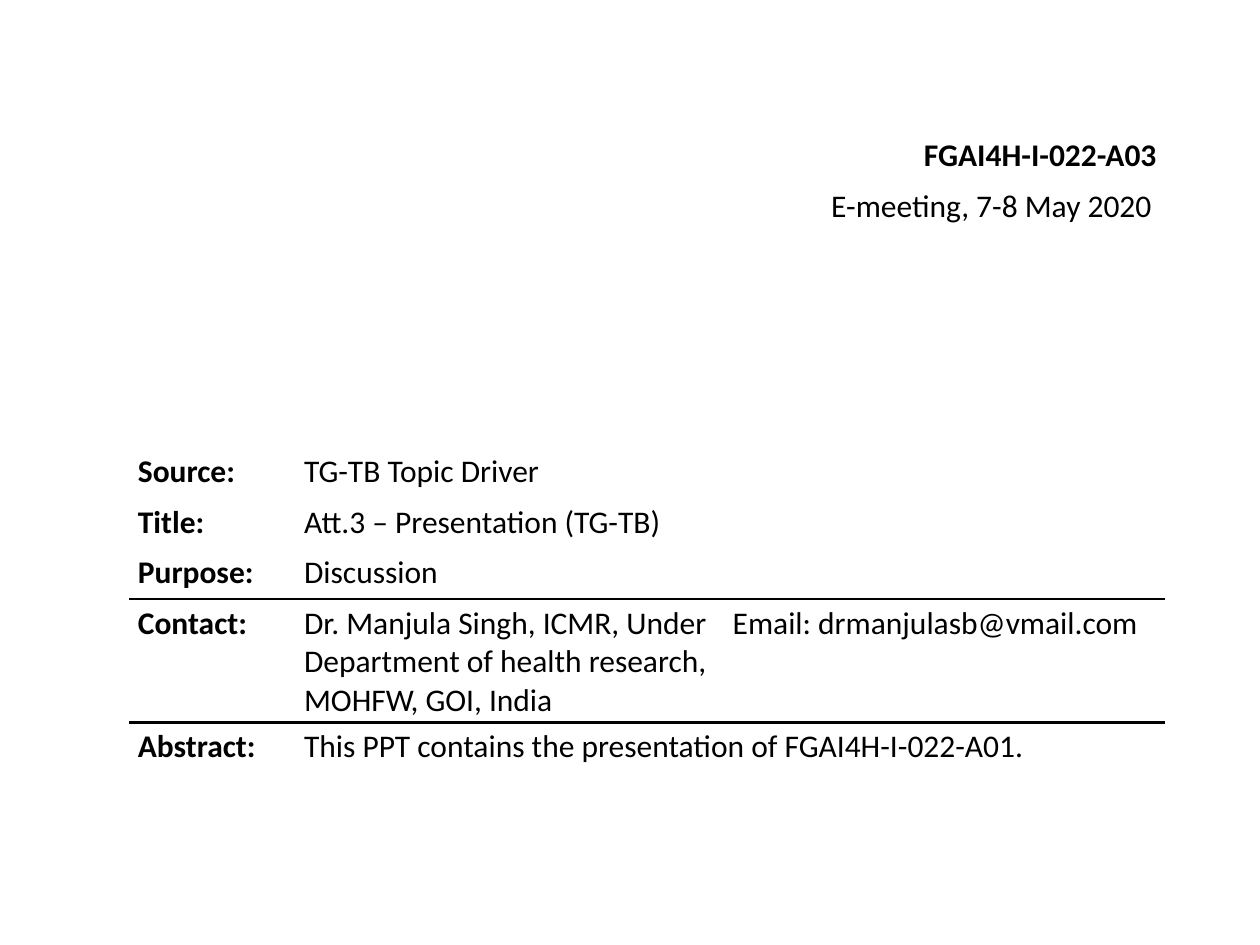
from dataclasses import dataclass

from lxml.etree import SubElement
from pptx import Presentation
from pptx.dml.color import RGBColor
from pptx.enum.text import MSO_AUTO_SIZE, PP_ALIGN
from pptx.oxml.ns import qn
from pptx.util import Cm, Pt


@dataclass(frozen=True)
class Theme:
    """Hold the colours, font and sizes of the cover sheet."""

    ink: str = "000000"
    font: str = "Calibri"
    text_size: int = 18
    rule_width: float = 1.5
    plain_table_style: str = "{2D5ABB26-0587-4C30-8999-92F81FD0307C}"


THEME = Theme()

COLUMN_WIDTHS = (3.35, 8.64, 8.89)
ROW_HEIGHTS = (1.02, 1.02, 1.02, 2.47, 1.02)
RULES_BELOW = (2, 3)
DETAILS = (
    ("Source:", "TG-TB Topic Driver"),
    ("Title:", "Att.3 – Presentation (TG-TB)"),
    ("Purpose:", "Discussion"),
    (
        "Contact:",
        "Dr. Manjula Singh, ICMR, Under Department of health research, MOHFW, GOI, India",
        "Email: drmanjulasb@vmail.com",
    ),
    ("Abstract:", "This PPT contains the presentation of FGAI4H-I-022-A01.\u00a0"),
)


def write_text(text_frame, text, bold=False, alignment=PP_ALIGN.LEFT):
    """Put one styled paragraph into a text frame."""
    text_frame.text = text
    paragraph = text_frame.paragraphs[0]
    paragraph.alignment = alignment
    for run in paragraph.runs:
        run.font.name = THEME.font
        run.font.size = Pt(THEME.text_size)
        run.font.bold = bold
        run.font.color.rgb = RGBColor.from_string(THEME.ink)


def add_heading(slide, text, left, top, width, bold=False):
    """Add a right-aligned line of the document heading."""
    shape = slide.shapes.add_textbox(Cm(left), Cm(top), Cm(width), Cm(1.02))
    text_frame = shape.text_frame
    text_frame.word_wrap = False
    text_frame.auto_size = MSO_AUTO_SIZE.SHAPE_TO_FIT_TEXT
    write_text(text_frame, text, bold, PP_ALIGN.RIGHT)


def add_rule(cell, side):
    """Draw a solid border on one side of a table cell."""
    properties = cell._tc.get_or_add_tcPr()
    line = SubElement(properties, qn(f"a:ln{side}"), w=str(Pt(THEME.rule_width)))
    fill = SubElement(line, qn("a:solidFill"))
    SubElement(fill, qn("a:srgbClr"), val=THEME.ink)


def format_cell(cell, row_index):
    """Set the margins, rules and empty fill of a table cell."""
    cell.margin_left = cell.margin_right = Cm(0.18)
    cell.margin_top = cell.margin_bottom = Cm(0.1)
    if row_index - 1 in RULES_BELOW:
        add_rule(cell, "T")
    if row_index in RULES_BELOW:
        add_rule(cell, "B")
    cell.fill.background()


def add_details_table(slide, left, top):
    """Add the table of document details with labels in the first column."""
    table = slide.shapes.add_table(
        len(ROW_HEIGHTS), len(COLUMN_WIDTHS), Cm(left), Cm(top),
        Cm(sum(COLUMN_WIDTHS)), Cm(sum(ROW_HEIGHTS)),
    ).table
    table.first_row = table.horz_banding = False
    table._tbl.tblPr.find(qn("a:tableStyleId")).text = THEME.plain_table_style
    for column, width in zip(table.columns, COLUMN_WIDTHS):
        column.width = Cm(width)
    for row_index, texts in enumerate(DETAILS):
        row = table.rows[row_index]
        row.height = Cm(ROW_HEIGHTS[row_index])
        for cell in row.cells:
            format_cell(cell, row_index)
        if len(texts) < len(COLUMN_WIDTHS):
            table.cell(row_index, 1).merge(table.cell(row_index, 2))
        for column_index, text in enumerate(texts):
            cell = table.cell(row_index, column_index)
            write_text(cell.text_frame, text, bold=column_index == 0)


def main():
    """Build and save the document cover slide."""
    presentation = Presentation()
    presentation.slide_width = Cm(25.4)
    presentation.slide_height = Cm(19.05)
    slide = presentation.slides.add_slide(presentation.slide_layouts[6])
    add_heading(slide, "FGAI4H-I-022-A03", 18.31, 2.6, 5.26, bold=True)
    add_heading(slide, "E-meeting, 7-8 May 2020", 16.41, 3.63, 7.06)
    add_details_table(slide, 2.6, 9.02)
    presentation.save("out.pptx")


if __name__ == "__main__":
    main()
